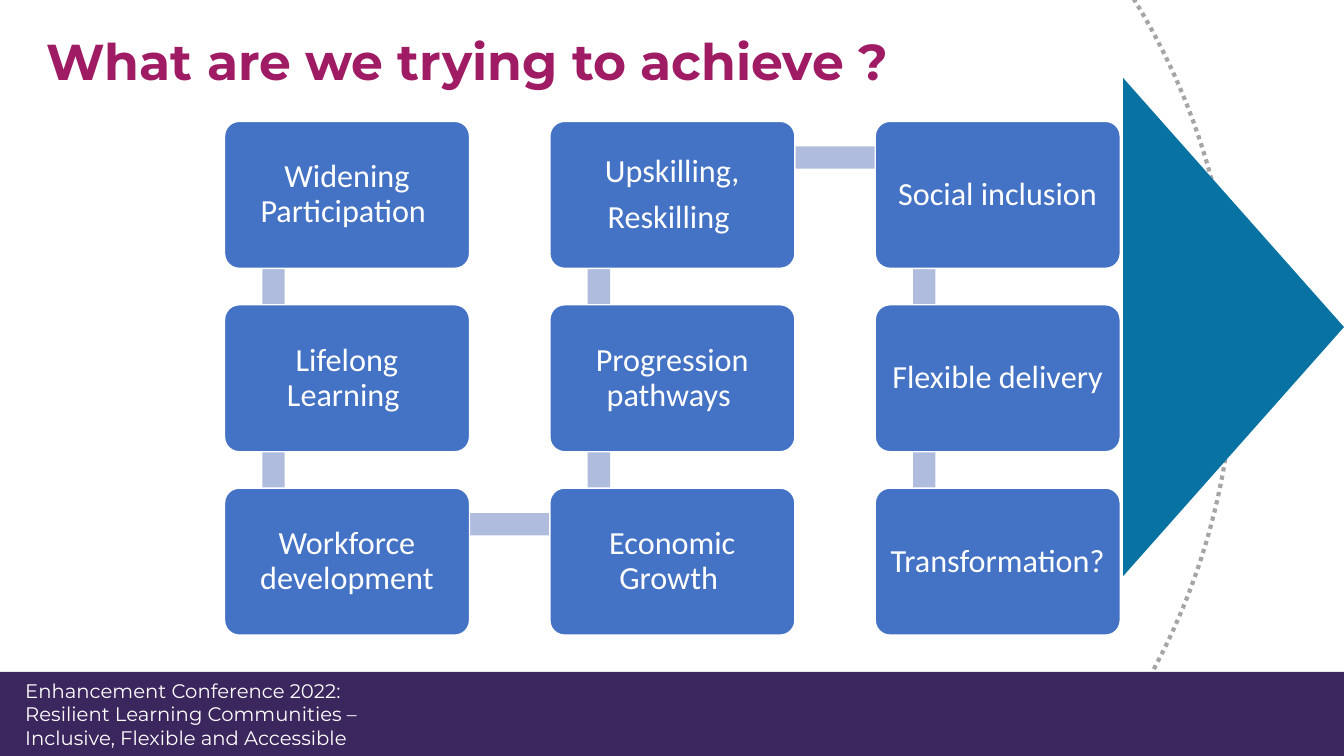
from pptx import Presentation
from pptx.dml.color import RGBColor
from pptx.enum.dml import MSO_LINE
from pptx.enum.shapes import MSO_SHAPE
from pptx.enum.text import MSO_ANCHOR, PP_ALIGN
from pptx.util import Pt

COLORS = {
    "plum": "9F1B64", "purple": "3B265E", "teal": "0873A2", "blue": "4472C4",
    "pale": "B0BCDE", "grey": "A5A5A5", "white": "FFFFFF",
}


class SlideBuilder:
    """Holds the style and the current page; lengths are in points."""

    def __init__(self, page):
        self.page = page
        self.heading_font = "Montserrat"
        self.body_font = "Calibri"

    def color(self, name):
        return RGBColor.from_string(COLORS[name])

    def shape(self, kind, left, top, width, height, fill=None, line=None, line_width=1):
        shape = self.page.shapes.add_shape(kind, Pt(left), Pt(top), Pt(width), Pt(height))
        shape.shadow.inherit = False
        if fill:
            shape.fill.solid()
            shape.fill.fore_color.rgb = self.color(fill)
        else:
            shape.fill.background()
        if line:
            shape.line.color.rgb = self.color(line)
            shape.line.width = Pt(line_width)
        else:
            shape.line.fill.background()
        return shape

    def fill_text(self, frame, lines, font, size, color, align=PP_ALIGN.LEFT,
                  bold=False, spacing=1.0, after=0):
        frame.word_wrap = True
        for index, line in enumerate(lines):
            para = frame.add_paragraph() if index else frame.paragraphs[0]
            para.text = line
            para.alignment = align
            para.line_spacing = spacing
            para.space_after = Pt(after)
            para.font.name = font
            para.font.size = Pt(size)
            para.font.bold = bold
            para.font.color.rgb = self.color(color)

    def title(self, text, left, top, width, height):
        box = self.page.shapes.add_textbox(Pt(left), Pt(top), Pt(width), Pt(height))
        self.fill_text(box.text_frame, [text], self.heading_font, 36, "plum",
                       bold=True, spacing=0.9)

    def footer(self, lines, top, width, height):
        band = self.shape(MSO_SHAPE.RECTANGLE, 0, top, width, height, "purple")
        band.text_frame.margin_left = Pt(18)
        band.text_frame.vertical_anchor = MSO_ANCHOR.MIDDLE
        self.fill_text(band.text_frame, lines, self.heading_font, 14, "white")

    def step(self, lines, left, top, width, height):
        box = self.shape(MSO_SHAPE.ROUNDED_RECTANGLE, left, top, width, height, "blue", "white")
        box.adjustments[0] = 0.1
        frame = box.text_frame
        frame.margin_left = frame.margin_right = Pt(7.2)
        frame.margin_top = frame.margin_bottom = Pt(7.2)
        frame.vertical_anchor = MSO_ANCHOR.MIDDLE
        self.fill_text(frame, lines, self.body_font, 23, "white", PP_ALIGN.CENTER,
                       spacing=0.9, after=8)


def main():
    deck = Presentation()
    deck.slide_width, deck.slide_height = Pt(960), Pt(540)
    page = deck.slides.add_slide(deck.slide_layouts[6])
    builder = SlideBuilder(page)

    # Background: dotted arc, large arrowhead, footer band
    arc = builder.shape(MSO_SHAPE.OVAL, -75.6, -227.5, 957, 957, line="grey", line_width=3)
    arc.line.dash_style = MSO_LINE.ROUND_DOT
    arrowhead = builder.shape(MSO_SHAPE.ISOSCELES_TRIANGLE, 703.3, 154.8, 355.7, 157.7, "teal")
    arrowhead.rotation = 90
    builder.footer(["Enhancement Conference 2022:",
                    "Resilient Learning Communities –",
                    "Inclusive, Flexible and Accessible"], 480, 960, 60)

    builder.title("What are we trying to achieve ?", 26, 23, 760, 86)

    # Steps, column by column from top to bottom
    columns = [
        [["Widening Participation "], ["Lifelong Learning "], ["Workforce development"]],
        [["Upskilling,", "Reskilling "], ["Progression pathways "], ["Economic Growth "]],
        [["Social inclusion"], ["Flexible delivery "], ["Transformation?"]],
    ]
    left, top, column_pitch, row_pitch = 160.4, 86.7, 232.4, 131
    thickness = 16

    # Links down each column
    for column in range(3):
        for row in range(2):
            builder.shape(MSO_SHAPE.RECTANGLE, left + column * column_pitch + 27,
                          top + row * row_pitch + 26, thickness, row_pitch, "pale")

    # Links across: bottom row first, then top row
    for column, row in [(0, 2), (1, 0)]:
        builder.shape(MSO_SHAPE.RECTANGLE, left + column * column_pitch + 35,
                      top + row * row_pitch + 17.8, column_pitch, thickness, "pale")

    # Step boxes
    for column, steps in enumerate(columns):
        for row, lines in enumerate(steps):
            builder.step(lines, left + column * column_pitch, top + row * row_pitch, 175, 105)

    deck.save("out.pptx")


if __name__ == "__main__":
    main()
